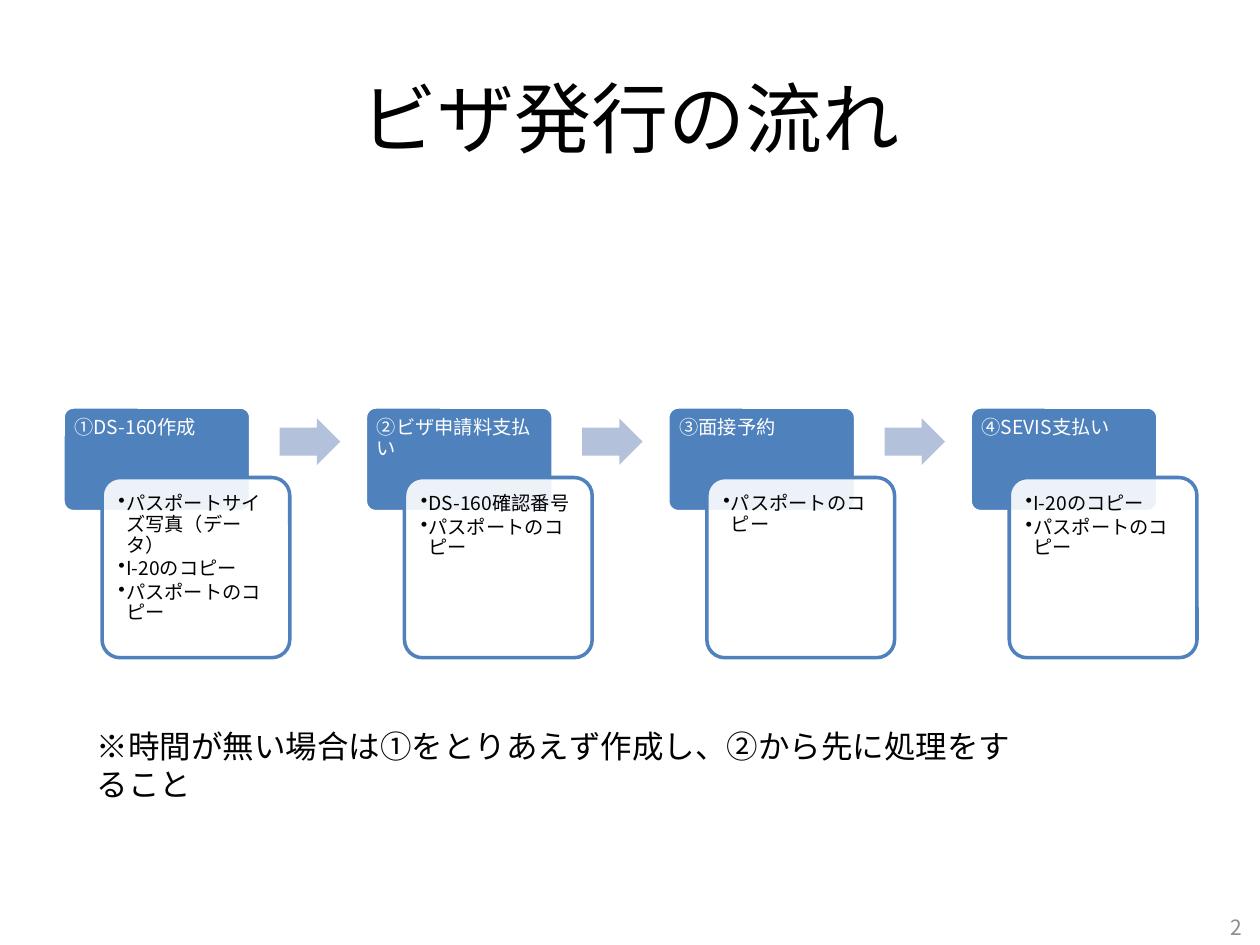
"""Build the visa issuance flow slide: four steps, each with its required documents."""
import pptx
import pptx.dml.color
import pptx.enum.shapes
import pptx.enum.text
import pptx.oxml
import pptx.oxml.ns
import pptx.util
import lxml.etree

BLACK = pptx.dml.color.RGBColor(0x00, 0x00, 0x00)
WHITE = pptx.dml.color.RGBColor(0xFF, 0xFF, 0xFF)
BLUE = pptx.dml.color.RGBColor(0x4F, 0x81, 0xBD)
PALE_BLUE = pptx.dml.color.RGBColor(0xB3, 0xC1, 0xDB)
GRAY = pptx.dml.color.RGBColor(0x8C, 0x8C, 0x8C)
FONT = "Noto Sans CJK KR"
ALIGN = pptx.enum.text.PP_ALIGN
ANCHOR = pptx.enum.text.MSO_ANCHOR
SHAPE = pptx.enum.shapes.MSO_SHAPE
qn = pptx.oxml.ns.qn

deck = pptx.Presentation()
deck.slide_width = pptx.util.Inches(10)
deck.slide_height = pptx.util.Inches(7.5)
page = deck.slides.add_slide(deck.slide_layouts[6])


def area(left, top, width, height):
    """Turn percentages of the slide's size into lengths."""
    across, down = deck.slide_width / 100, deck.slide_height / 100
    return [round(share) for share in (left * across, top * down, width * across, height * down)]


def add_text(place, lines, size, color=BLACK, align=ALIGN.LEFT, anchor=ANCHOR.TOP,
             insets=(0.1, 0.05, 0.1, 0.05), spacing=1.0, after=0, bullet=None):
    """Add a text box with one paragraph per line."""
    box = page.shapes.add_textbox(*place)
    frame = box.text_frame
    frame.word_wrap = True
    frame.vertical_anchor = anchor
    (frame.margin_left, frame.margin_top,
     frame.margin_right, frame.margin_bottom) = map(pptx.util.Inches, insets)
    for index, line in enumerate(lines):
        para = frame.paragraphs[0] if index == 0 else frame.add_paragraph()
        para.alignment = align
        para.line_spacing = spacing
        para.space_after = pptx.util.Pt(after)
        span = para.add_run()
        span.text = line
        span.font.size = pptx.util.Pt(size)
        span.font.name = FONT
        span.font.color.rgb = color
        lxml.etree.SubElement(span.font._element, qn("a:ea")).set("typeface", FONT)
        if bullet:
            para.level = 1
            settings = para._p.get_or_add_pPr()
            indent = pptx.util.Inches(0.06)
            settings.set("marL", str(indent))
            settings.set("indent", str(-indent))
            lxml.etree.SubElement(settings, qn("a:buChar")).set("char", bullet)


STEPS = [
    ("①DS-160作成", ["パスポートサイズ写真（データ）", "I-20のコピー", "パスポートのコピー"]),
    ("②ビザ申請料支払い", ["DS-160確認番号", "パスポートのコピー"]),
    ("③面接予約", ["パスポートのコピー"]),
    ("④SEVIS支払い", ["I-20のコピー", "パスポートのコピー"]),
]
FIRST_LEFT, PITCH, CARD_WIDTH = 5, 24, 14.9
STEP_TOP, DOCUMENTS_TOP = 43.07, 50.53

add_text(area(5, 4, 90, 16.67), ["ビザ発行の流れ"], 44,
         align=ALIGN.CENTER, anchor=ANCHOR.MIDDLE)

for number, (step, documents) in enumerate(STEPS):
    left = FIRST_LEFT + number * PITCH
    cards = [
        (area(left, STEP_TOP, CARD_WIDTH, 11.07), BLUE, WHITE),
        (area(left + 3.1, DOCUMENTS_TOP, CARD_WIDTH, 19.07), WHITE, BLUE),
    ]
    for place, fill, outline in cards:
        card = page.shapes.add_shape(SHAPE.ROUNDED_RECTANGLE, *place)
        card.adjustments[0] = 0.1
        card.shadow.inherit = False
        card.fill.solid()
        card.fill.fore_color.rgb = fill
        card.line.color.rgb = outline
        card.line.width = pptx.util.Pt(2)
        if fill == WHITE:
            tint = card._element.spPr.find(qn("a:solidFill")).find(qn("a:srgbClr"))
            lxml.etree.SubElement(tint, qn("a:alpha")).set("val", "90000")
    add_text(area(left, STEP_TOP, CARD_WIDTH, 7.33), [step], 11, color=WHITE,
             insets=(0.09, 0.09, 0.09, 0.05), spacing=0.9, after=4)
    add_text(area(left + 3.5, DOCUMENTS_TOP + 0.54, CARD_WIDTH - 0.8, 18), documents, 11,
             insets=(0.09,) * 4, spacing=0.9, after=1.5, bullet="•")
    if number < len(STEPS) - 1:
        arrow = page.shapes.add_shape(SHAPE.RIGHT_ARROW, *area(left + 17.2, 44.27, 4.8, 4.93))
        arrow.adjustments[0] = 0.6
        arrow.adjustments[1] = 0.5
        arrow.shadow.inherit = False
        arrow.fill.solid()
        arrow.fill.fore_color.rgb = PALE_BLUE
        arrow.line.fill.background()

add_text(area(6.7, 76.27, 76.1, 5.33),
         ["※時間が無い場合は①をとりあえず作成し、②から先に処理をすること"], 18)
add_text(area(76.3, 96.4, 23.3, 3.33), ["2"], 12, color=GRAY,
         align=ALIGN.RIGHT, anchor=ANCHOR.MIDDLE)

deck.save("out.pptx")
